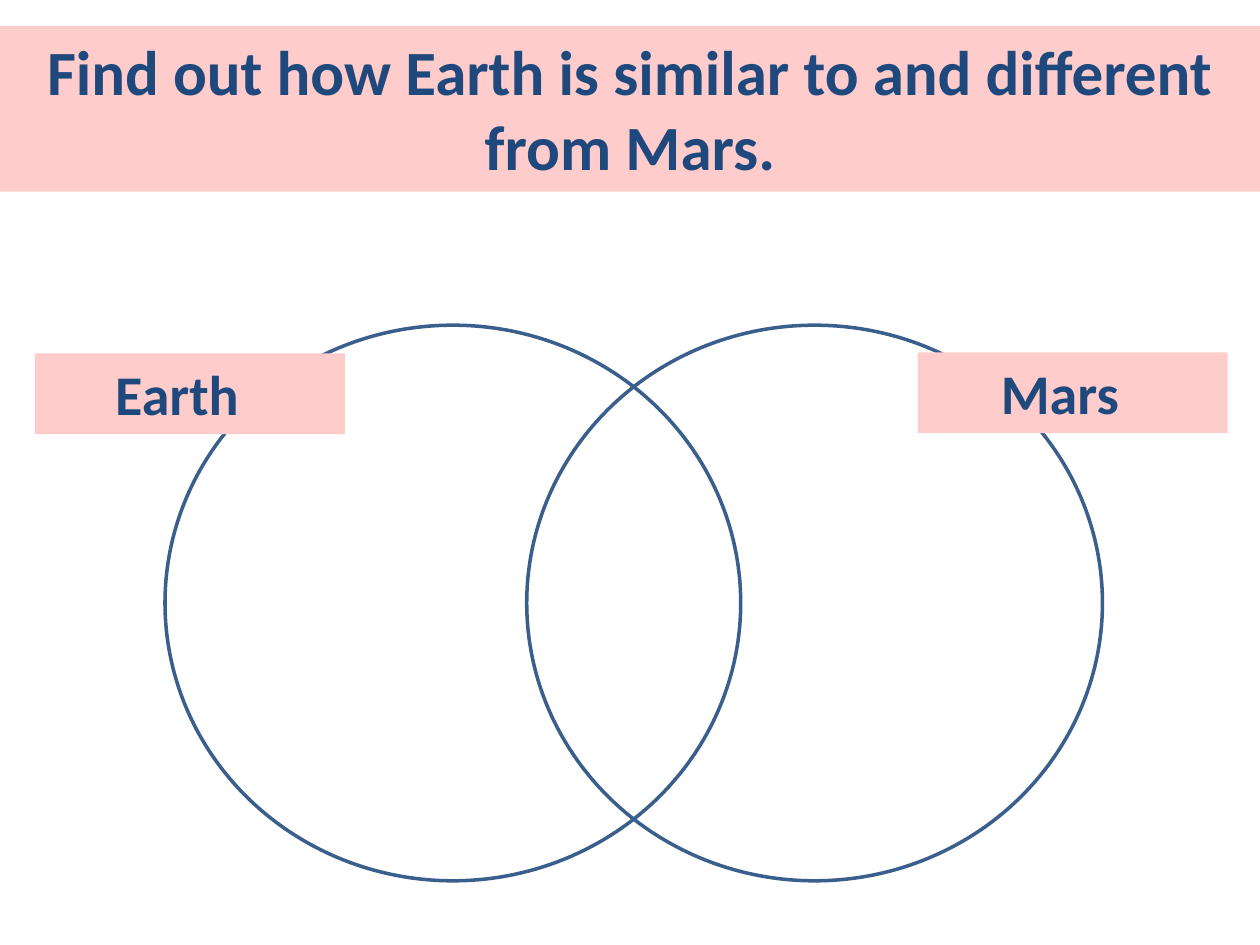
from dataclasses import dataclass

from pptx import Presentation
from pptx.dml.color import RGBColor
from pptx.enum.shapes import MSO_SHAPE
from pptx.enum.text import PP_ALIGN
from pptx.slide import Slide
from pptx.util import Pt

OVAL = MSO_SHAPE.OVAL
CENTER = PP_ALIGN.CENTER

SLIDE_WIDTH, SLIDE_HEIGHT = 720, 540
BLANK_LAYOUT = 6
FONT = "Calibri"
PINK, NAVY, OUTLINE = "FFCCCC", "1F497D", "3A5F8C"

CIRCLE_TOP, CIRCLE_WIDTH, CIRCLE_HEIGHT = 185.8, 329, 317.5
CIRCLE_LEFTS = (301, 94.3)
LABEL_WIDTH, LABEL_HEIGHT = 177.1, 46.1
LABEL_SIZE = 32
DEFAULT_INSET, LABEL_RIGHT_INSET = 7.2, 21.8


@dataclass
class Banner:
    text: str
    left: float
    top: float
    width: float = LABEL_WIDTH
    height: float = LABEL_HEIGHT
    size: float = LABEL_SIZE
    right_inset: float = LABEL_RIGHT_INSET


TITLE = Banner("Find out how Earth is similar to and different from Mars.",
               0, 15, SLIDE_WIDTH, 94.5, 36, DEFAULT_INSET)
LABELS = (Banner("Earth", 20, 202), Banner("Mars", 524.5, 201.4))


def color(hex_value: str) -> RGBColor:
    return RGBColor.from_string(hex_value)


def add_banner(slide: Slide, banner: Banner) -> None:
    shape = slide.shapes.add_textbox(Pt(banner.left), Pt(banner.top),
                                     Pt(banner.width), Pt(banner.height))
    shape.fill.solid()
    shape.fill.fore_color.rgb = color(PINK)
    text_frame = shape.text_frame
    text_frame.word_wrap = True
    text_frame.margin_right = Pt(banner.right_inset)
    text_frame.text = banner.text
    paragraph = text_frame.paragraphs[0]
    paragraph.alignment = CENTER
    font = paragraph.runs[0].font
    font.name = FONT
    font.size = Pt(banner.size)
    font.bold = True
    font.color.rgb = color(NAVY)


def add_circle(slide: Slide, left: float) -> None:
    shape = slide.shapes.add_shape(OVAL, Pt(left), Pt(CIRCLE_TOP),
                                   Pt(CIRCLE_WIDTH), Pt(CIRCLE_HEIGHT))
    shape.shadow.inherit = False
    shape.fill.background()
    shape.line.color.rgb = color(OUTLINE)
    shape.line.width = Pt(2)


def main() -> None:
    presentation = Presentation()
    presentation.slide_width = Pt(SLIDE_WIDTH)
    presentation.slide_height = Pt(SLIDE_HEIGHT)
    slide = presentation.slides.add_slide(presentation.slide_layouts[BLANK_LAYOUT])

    add_banner(slide, TITLE)
    for left in CIRCLE_LEFTS:
        add_circle(slide, left)
    for label in LABELS:
        add_banner(slide, label)

    presentation.save("out.pptx")


if __name__ == "__main__":
    main()
